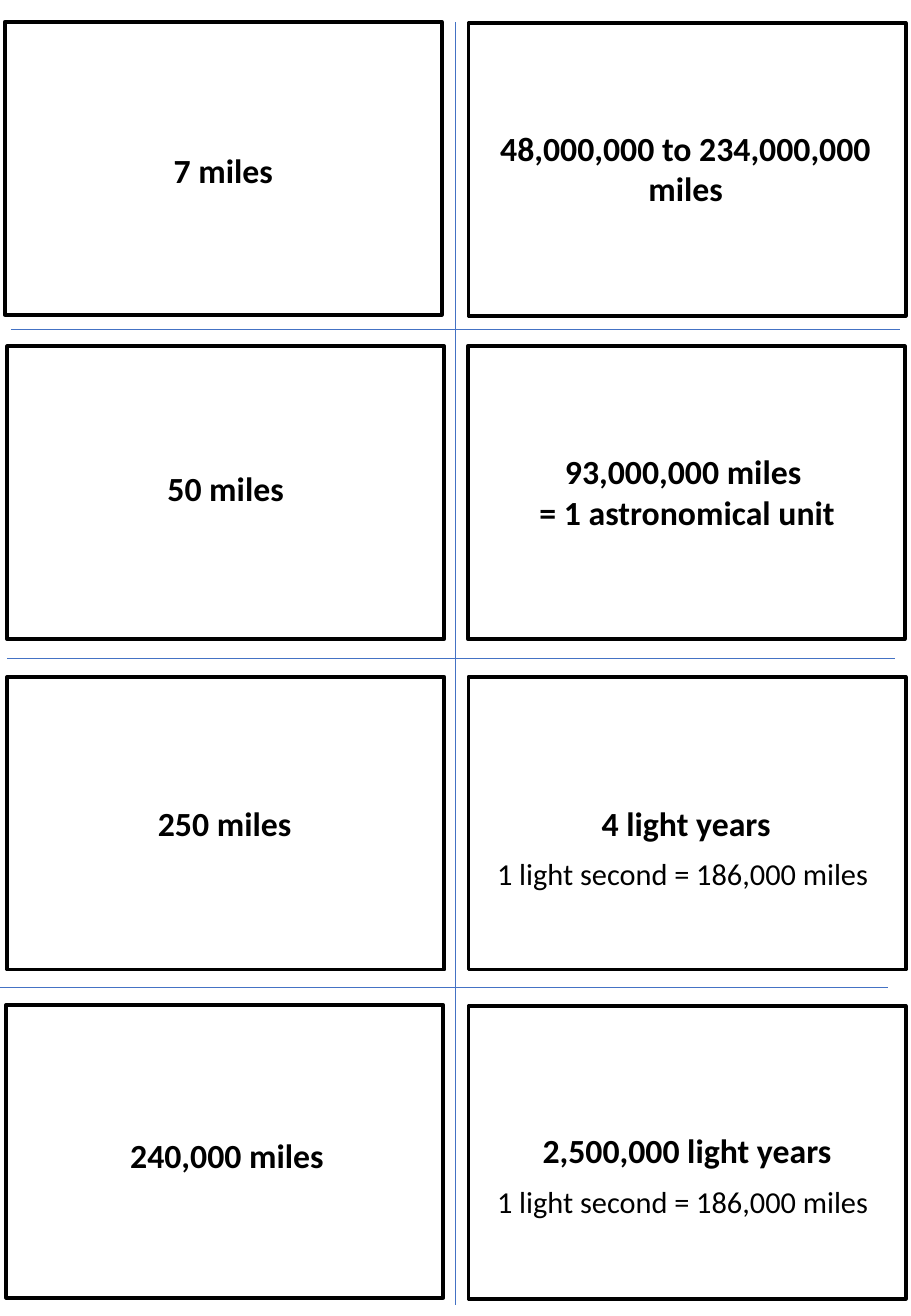
from dataclasses import dataclass

from lxml.etree import SubElement
from pptx import Presentation
from pptx.dml.color import RGBColor
from pptx.enum.shapes import MSO_CONNECTOR, MSO_SHAPE
from pptx.enum.text import MSO_AUTO_SIZE, PP_ALIGN
from pptx.oxml.ns import qn
from pptx.slide import Slide
from pptx.util import Cm, Pt


@dataclass(frozen=True)
class Theme:
    font: str = "Calibri"
    ink: RGBColor = RGBColor(0x00, 0x00, 0x00)
    guide: RGBColor = RGBColor(0x44, 0x72, 0xC4)
    distance_size: float = 20
    note_size: float = 18
    border: float = 2.25
    guide_width: float = 0.5


@dataclass(frozen=True)
class Card:
    """A distance card; all lengths are in centimetres."""
    left: float
    top: float
    text_left: float
    text_top: float
    distance: str
    note_top: float = 0
    note: str = ""


@dataclass(frozen=True)
class Guide:
    """A cutting line; all lengths are in centimetres."""
    x1: float
    y1: float
    x2: float
    y2: float


THEME = Theme()
CARD_W, CARD_H = 9.14, 6.12
NOTE_LEFT = 9.78
LIGHT_SECOND = "1 light second = 186,000 miles "

GUIDES = [
    Guide(9.53, 0.46, 9.53, 27.28),
    Guide(0, 20.65, 18.57, 20.65),
    Guide(0.15, 13.77, 18.72, 13.77),
    Guide(0.23, 6.88, 18.82, 6.88),
]

CARDS = [
    # Left column
    Card(0.1, 0.46, 0.1, 3.0, "7 miles"),
    Card(0.15, 7.24, 0.15, 9.65, "50 miles"),
    Card(0.15, 14.15, 0.13, 16.66, "250 miles"),
    Card(0.13, 21.01, 0.18, 23.6, "240,000 miles"),
    # Right column
    Card(9.8, 0.48, 9.77, 2.54, "48,000,000 to 234,000,000 miles"),
    Card(9.78, 7.24, 9.8, 9.3, "93,000,000 miles \n= 1 astronomical unit"),
    Card(9.8, 14.15, 9.78, 16.66, "4 light years", 17.75, LIGHT_SECOND),
    Card(9.8, 21.03, 9.8, 23.5, "2,500,000 light years", 24.61, LIGHT_SECOND),
]


def add_text(slide: Slide, text: str, *, left: float, top: float,
             size: float, bold: bool = False) -> None:
    lines = text.split("\n")
    height = 0.27 + 0.0424 * size * len(lines)
    tb = slide.shapes.add_textbox(Cm(left), Cm(top), Cm(CARD_W), Cm(height))
    tf = tb.text_frame
    tf.word_wrap = True
    tf.auto_size = MSO_AUTO_SIZE.SHAPE_TO_FIT_TEXT
    for i, line in enumerate(lines):
        p = tf.add_paragraph() if i else tf.paragraphs[0]
        p.alignment = PP_ALIGN.CENTER
        r = p.add_run()
        r.text = line
        r.font.name = THEME.font
        r.font.size = Pt(size)
        r.font.bold = bold
        r.font.color.rgb = THEME.ink


def add_guide(slide: Slide, guide: Guide) -> None:
    line = slide.shapes.add_connector(
        MSO_CONNECTOR.STRAIGHT,
        Cm(guide.x1), Cm(guide.y1), Cm(guide.x2), Cm(guide.y2))
    line.line.color.rgb = THEME.guide
    line.line.width = Pt(THEME.guide_width)
    SubElement(line._element.spPr, qn("a:effectLst"))


def add_card(slide: Slide, card: Card) -> None:
    sp = slide.shapes.add_shape(MSO_SHAPE.RECTANGLE, Cm(card.left),
                                Cm(card.top), Cm(CARD_W), Cm(CARD_H))
    sp.shadow.inherit = False
    sp.fill.background()
    sp.line.color.rgb = THEME.ink
    sp.line.width = Pt(THEME.border)
    add_text(slide, card.distance, left=card.text_left, top=card.text_top,
             size=THEME.distance_size, bold=True)
    if card.note:
        add_text(slide, card.note, left=NOTE_LEFT, top=card.note_top,
                 size=THEME.note_size)


def main() -> None:
    prs = Presentation()
    prs.slide_width, prs.slide_height = Cm(19.05), Cm(27.51)
    slide = prs.slides.add_slide(prs.slide_layouts[6])

    # Cutting lines between the cards
    for guide in GUIDES:
        add_guide(slide, guide)

    # Distance cards
    for card in CARDS:
        add_card(slide, card)

    prs.save("out.pptx")


if __name__ == "__main__":
    main()
